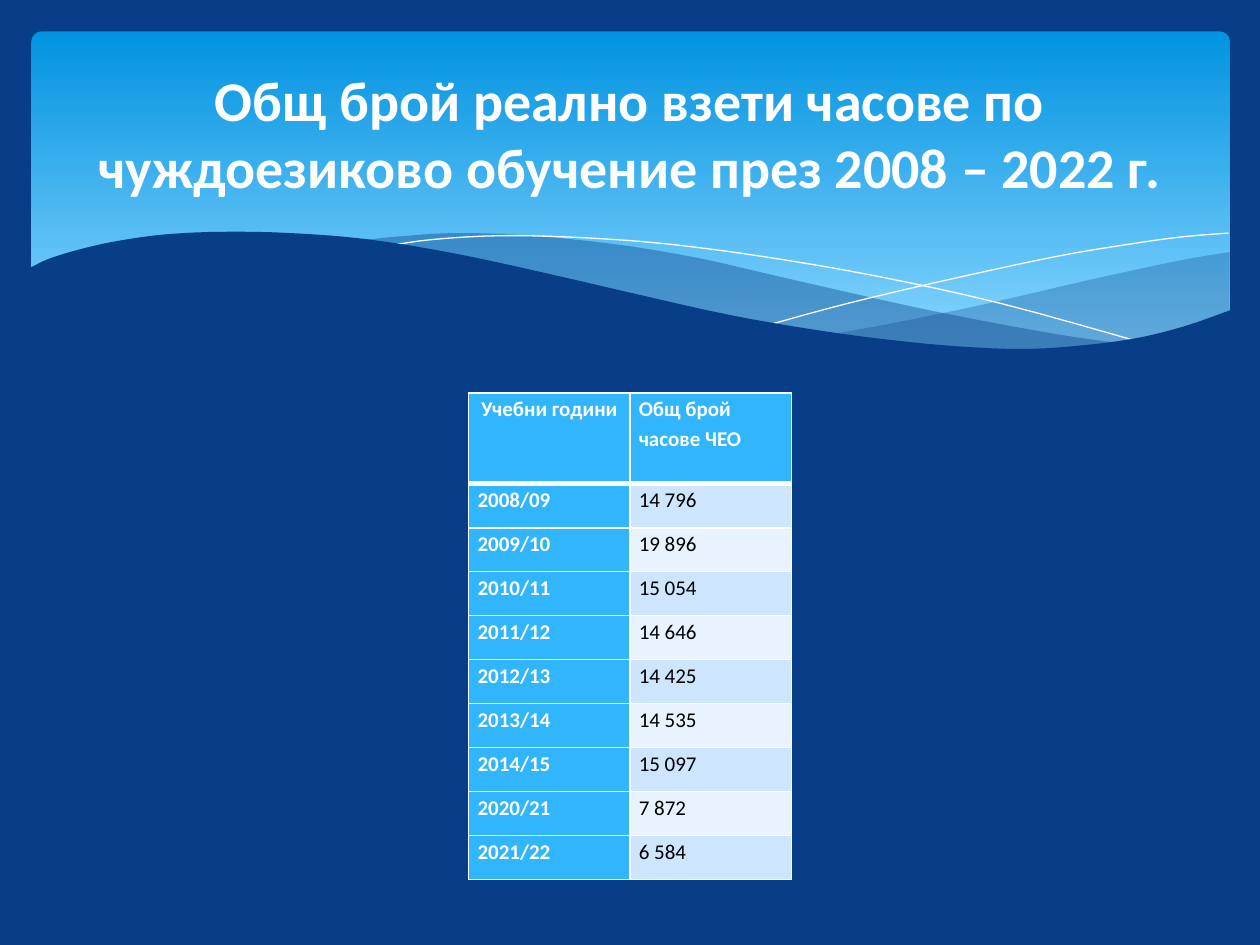
"""Builds a slide with a wave banner, a title and a table of hours taught."""
import pptx
import pptx.util
import pptx.dml.color
import pptx.enum.shapes
import pptx.enum.text
import pptx.oxml
import pptx.oxml.ns

RGB = pptx.dml.color.RGBColor
Inches = pptx.util.Inches
Pt = pptx.util.Pt
ALIGN = pptx.enum.text.PP_ALIGN
NAVY = RGB(0x07, 0x3E, 0x87)
DEEP = RGB(0x02, 0x93, 0xE0)
PALE = RGB(0x83, 0xD3, 0xFE)
SKY = RGB(0x31, 0xB6, 0xFD)
BANDS = RGB(0xCE, 0xE5, 0xFE), RGB(0xE8, 0xF3, 0xFF)
WHITE = RGB(255, 255, 255)
BLACK = RGB(0, 0, 0)

WIDE, HIGH = 10, 7.5
TITLE = "Общ брой реално взети часове по чуждоезиково обучение през 2008 – 2022 г."
HEAD = ("Учебни години", "Общ брой часове ЧЕО")
HOURS = [
    ("2008/09", "14 796"),
    ("2009/10", "19 896"),
    ("2010/11", "15 054"),
    ("2011/12", "14 646"),
    ("2012/13", "14 425"),
    ("2013/14", "14 535"),
    ("2014/15", "15 097"),
    ("2020/21", "7 872"),
    ("2021/22", "6 584"),
]
WAVES = [
    {"fill": NAVY, "alpha": 29, "curves": [
        [(9.76, 2), (9.35, 2.07), (8.61, 2.23), (7.79, 2.42), (7.06, 2.57), (6.61, 2.65)],
        [(6.61, 2.65), (7.05, 2.71), (7.57, 2.76), (8.03, 2.78), (8.54, 2.76),
         (8.97, 2.7), (9.35, 2.62), (9.76, 2.47)]]},
    {"fill": NAVY, "alpha": 40, "curves": [
        [(8.93, 2.73), (8.37, 2.65), (7.41, 2.47), (6.29, 2.22), (5.55, 2.05), (4.89, 1.94),
         (4.2, 1.87), (3.61, 1.85), (3.13, 1.88), (2.86, 1.91)],
        [(2.86, 1.91), (3.42, 1.99), (4.04, 2.11), (4.49, 2.22), (5.3, 2.4), (6.01, 2.55),
         (6.65, 2.66), (7.22, 2.74), (7.73, 2.77), (8.18, 2.78), (8.57, 2.77), (8.93, 2.73)]]},
    {"curves": [
        [(3.09, 1.95), (3.44, 1.9), (4.01, 1.87), (4.69, 1.89), (5.33, 1.94), (6.08, 2.04),
         (6.95, 2.19), (7.95, 2.41), (9.07, 2.72)]]},
    {"curves": [
        [(6.13, 2.57), (6.72, 2.41), (7.48, 2.23), (8.36, 2.04), (8.95, 1.94),
         (9.38, 1.88), (9.75, 1.85)]]},
    {"fill": NAVY, "curves": [
        [(9.77, 2.46), (9.4, 2.59), (8.99, 2.69), (8.5, 2.75), (8.09, 2.77), (7.61, 2.75),
         (7.08, 2.7), (6.48, 2.62), (5.79, 2.5), (5.03, 2.33), (4.47, 2.2), (3.65, 2.02),
         (2.92, 1.9), (2.3, 1.85), (1.77, 1.84), (1.32, 1.86), (0.95, 1.91), (0.67, 1.97),
         (0.4, 2.05), (0.23, 2.13)],
        [(0.23, 3.29), (9.77, 3.29)]]},
]


def smooth(knots, steps=4):
    """Return points on a Catmull-Rom curve through the knots."""
    if len(knots) < 3:
        return knots
    ends = [knots[0], *knots, knots[-1]]
    dots = []
    for a, b, c, d in zip(ends, ends[1:], ends[2:], ends[3:]):
        for k in range(steps):
            t = k / steps
            dots.append(tuple(
                q + t * (r - p) / 2 + t * t * (2 * p - 5 * q + 4 * r - s) / 2
                + t ** 3 * (3 * q - p - 3 * r + s) / 2
                for p, q, r, s in zip(a, b, c, d)))
    return dots + [knots[-1]]


def write(frame, text, size=12, color=WHITE, bold=True, align=ALIGN.LEFT, space=1.0):
    """Put formatted text in a frame."""
    para = frame.paragraphs[0]
    para.alignment = align
    para.line_spacing = space
    run = para.add_run()
    run.text = text
    run.font.name = "Calibri"
    run.font.size = Pt(size)
    run.font.bold = bold
    run.font.color.rgb = color


def draw_panel(slide):
    """Draw the gradient panel behind the title."""
    panel = slide.shapes.add_shape(
        pptx.enum.shapes.MSO_SHAPE.ROUNDED_RECTANGLE,
        *map(Inches, (0.25, 0.25, WIDE - 0.49, 2.7)))
    panel.adjustments[0] = 0.03
    panel.shadow.inherit = False
    panel.line.fill.background()
    panel.fill.gradient()
    panel.fill.gradient_angle = 270
    for stop, color, place in zip(panel.fill.gradient_stops, (DEEP, PALE), (0, 0.9)):
        stop.color.rgb = color
        stop.position = place


def draw_wave(slide, curves, fill=None, alpha=100):
    """Draw a filled wave, or a thin white line when there is no fill."""
    dots = [(Inches(x), Inches(y)) for curve in curves for x, y in smooth(curve)]
    build = slide.shapes.build_freeform(*dots[0], scale=1.0)
    build.add_line_segments(dots[1:], close=fill is not None)
    wave = build.convert_to_shape()
    wave.shadow.inherit = False
    if fill is None:
        wave.fill.background()
        wave.line.color.rgb = WHITE
        wave.line.width = 0
        return
    wave.line.fill.background()
    wave.fill.solid()
    wave.fill.fore_color.rgb = fill
    if alpha < 100:
        tint = wave._element.spPr.find(".//" + pptx.oxml.ns.qn("a:srgbClr"))
        tint.append(pptx.oxml.parse_xml(
            f'<a:alpha {pptx.oxml.ns.nsdecls("a")} val="{alpha * 1000}"/>'))


def edge(cell, top, base):
    """Give a cell white borders, with top and base widths in points."""
    props = cell._tc.get_or_add_tcPr()
    for spot, (side, width) in enumerate(zip("LRTB", (1, 1, top, base))):
        props.insert(spot, pptx.oxml.parse_xml(
            f'<a:ln{side} {pptx.oxml.ns.nsdecls("a")} w="{Pt(width)}">'
            f'<a:solidFill><a:srgbClr val="{WHITE}"/></a:solidFill></a:ln{side}>'))


def draw_table(slide):
    """Draw the table of hours by school year."""
    rows = [HEAD, *HOURS]
    width, height, first = 2.56, 3.86, 0.72
    table = slide.shapes.add_table(
        len(rows), 2, *map(Inches, ((WIDE - width) / 2, 3.12, width, height))).table
    table.first_row = table.horz_banding = False
    for col in table.columns:
        col.width = Inches(width / 2)
    for r, texts in enumerate(rows):
        table.rows[r].height = Inches(first if r == 0 else (height - first) / len(HOURS))
        for c, text in enumerate(texts):
            cell = table.cell(r, c)
            body = r > 0 and c > 0
            cell.margin_left = cell.margin_right = Inches(0.07)
            cell.margin_top = cell.margin_bottom = 0
            cell.fill.solid()
            cell.fill.fore_color.rgb = BANDS[(r - 1) % 2] if body else SKY
            edge(cell, 3 if r == 1 else 1, 3 if r == 0 else 1)
            write(cell.text_frame, text, color=BLACK if body else WHITE, bold=not body,
                  align=ALIGN.CENTER if r == c == 0 else ALIGN.LEFT, space=1.15)


def main():
    """Build and save the slide."""
    deck = pptx.Presentation()
    deck.slide_width, deck.slide_height = Inches(WIDE), Inches(HIGH)
    slide = deck.slides.add_slide(deck.slide_layouts[5])
    slide.background.fill.solid()
    slide.background.fill.fore_color.rgb = NAVY
    draw_panel(slide)
    for wave in WAVES:
        draw_wave(slide, **wave)
    draw_table(slide)
    title = slide.shapes.title
    title.left, title.top, title.width, title.height = map(Inches, (0.5, 0.37, WIDE - 1, 1.37))
    title.text_frame.word_wrap = True
    title.text_frame.auto_size = pptx.enum.text.MSO_AUTO_SIZE.NONE
    title.text_frame.vertical_anchor = pptx.enum.text.MSO_ANCHOR.MIDDLE
    write(title.text_frame, TITLE, size=32, align=ALIGN.CENTER)
    slide.shapes._spTree.append(title._element)
    deck.save("out.pptx")


if __name__ == "__main__":
    main()
